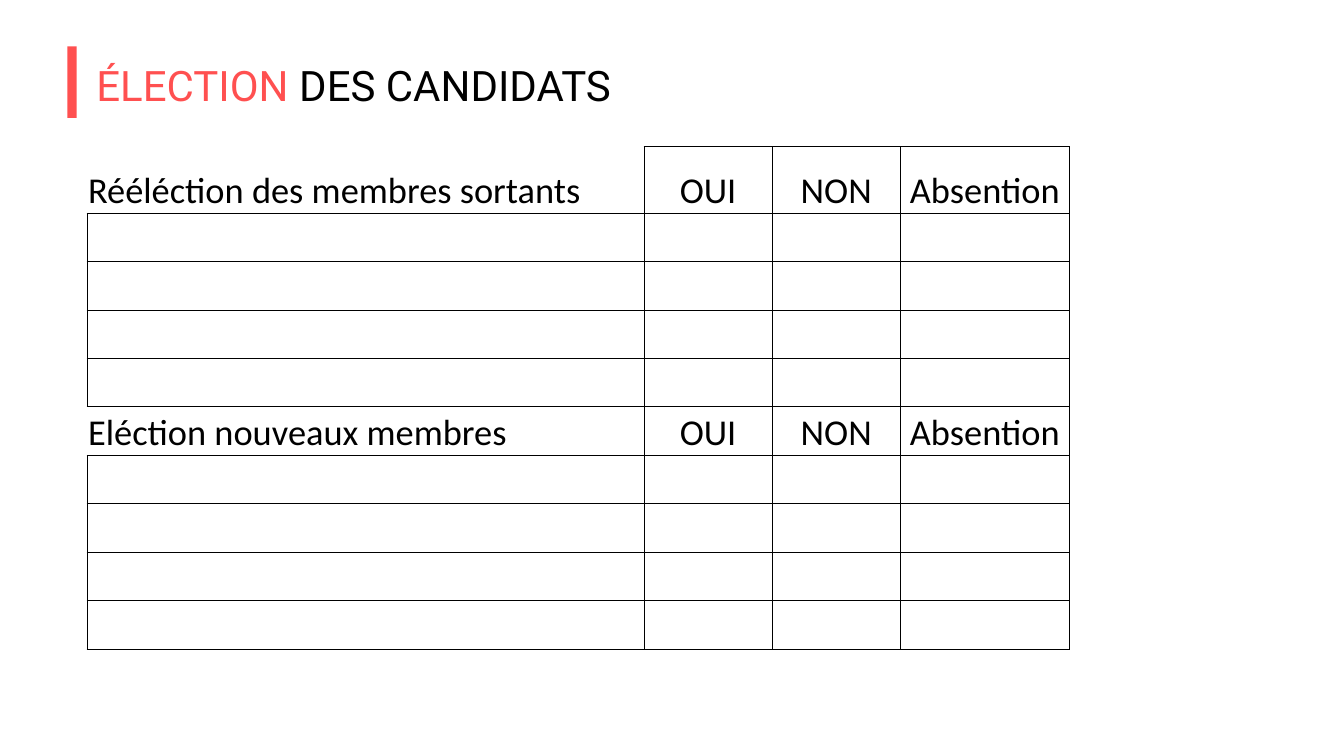
"""Builds the ballot slide for the election of candidates."""
from pptx import Presentation
from pptx import util as u
from pptx.dml.color import RGBColor
from pptx.enum import shapes, text
from pptx.oxml import ns
from lxml import etree

INK = {"red": "FF5050", "black": "000000"}
HEADS = {0: "Rééléction des membres sortants", 5: "Eléction nouveaux membres"}
VOTES = ["OUI", "NON", "Absention"]
COLS = [14.04, 3.23, 3.23, 4.26]
ROWS = [1.68] + [1.22] * 9


def write(par, words, font="Calibri", size=26, ink="black", align=None):
    """Add one formatted run to a paragraph."""
    run = par.add_run()
    run.text = words
    run.font.name = font
    run.font.size = u.Pt(size)
    run.font.color.rgb = RGBColor.from_string(INK[ink])
    if align is not None:
        par.alignment = align


class Deck:
    """Holds the style and the current slide."""

    def __init__(self):
        """Open a wide deck with one blank slide."""
        self.deck = Presentation()
        self.deck.slide_width = u.Cm(33.87)
        self.deck.slide_height = u.Cm(19.05)
        self.slide = self.deck.slides.add_slide(self.deck.slide_layouts[6])

    def title(self, parts, *box):
        """Add a heading made of coloured parts."""
        frame = self.slide.shapes.add_textbox(*map(u.Cm, box)).text_frame
        frame.word_wrap = True
        frame.vertical_anchor = text.MSO_ANCHOR.MIDDLE
        par = frame.paragraphs[0]
        par.line_spacing = 1.2
        for words, ink in parts:
            write(par, words, font="Roboto", size=30, ink=ink)

    def bar(self, ink, *box):
        """Add a plain filled rectangle."""
        bar = self.slide.shapes.add_shape(
            shapes.MSO_SHAPE.RECTANGLE, *map(u.Cm, box))
        bar.shadow.inherit = False
        bar.fill.solid()
        bar.fill.fore_color.rgb = RGBColor.from_string(INK[ink])
        bar.line.fill.background()

    def edge(self, cell, sides):
        """Draw the named sides of a cell and hide the others."""
        props = cell._tc.get_or_add_tcPr()
        for side in "LRTB":
            line = etree.SubElement(props, ns.qn("a:ln" + side), w=str(u.Pt(0.5)))
            if side in sides:
                fill = etree.SubElement(line, ns.qn("a:solidFill"))
                etree.SubElement(fill, ns.qn("a:srgbClr"), val=INK["black"])
            else:
                etree.SubElement(line, ns.qn("a:noFill"))

    def ballot(self, left, top):
        """Add the voting table."""
        grid = self.slide.shapes.add_table(
            len(ROWS), len(COLS), u.Cm(left), u.Cm(top),
            u.Cm(sum(COLS)), u.Cm(sum(ROWS))).table
        grid.first_row = grid.horz_banding = False
        for col, wide in zip(grid.columns, COLS):
            col.width = u.Cm(wide)
        for r, high in enumerate(ROWS):
            grid.rows[r].height = u.Cm(high)
            for c in range(len(COLS)):
                cell = grid.cell(r, c)
                head = r in HEADS
                sides = "LRTB"
                if head and c == 0:
                    sides = "RTB" if r else "RB"
                self.edge(cell, sides)
                cell.fill.background()
                cell.margin_left = cell.margin_right = cell.margin_top = u.Cm(0.03)
                cell.margin_bottom = 0
                cell.vertical_anchor = text.MSO_ANCHOR.BOTTOM
                if head:
                    par = cell.text_frame.paragraphs[0]
                    if c:
                        write(par, VOTES[c - 1], align=text.PP_ALIGN.CENTER)
                    else:
                        write(par, HEADS[r])


def main():
    """Build and save the slide."""
    deck = Deck()
    deck.title([("ÉLECTION", "red"), (" DES CANDIDATS", "black")],
               2.18, 1.07, 31.67, 1.9)
    deck.bar("red", 1.7, 1.17, 0.23, 1.8)
    deck.ballot(2.19, 3.69)
    deck.deck.save("out.pptx")


if __name__ == "__main__":
    main()
